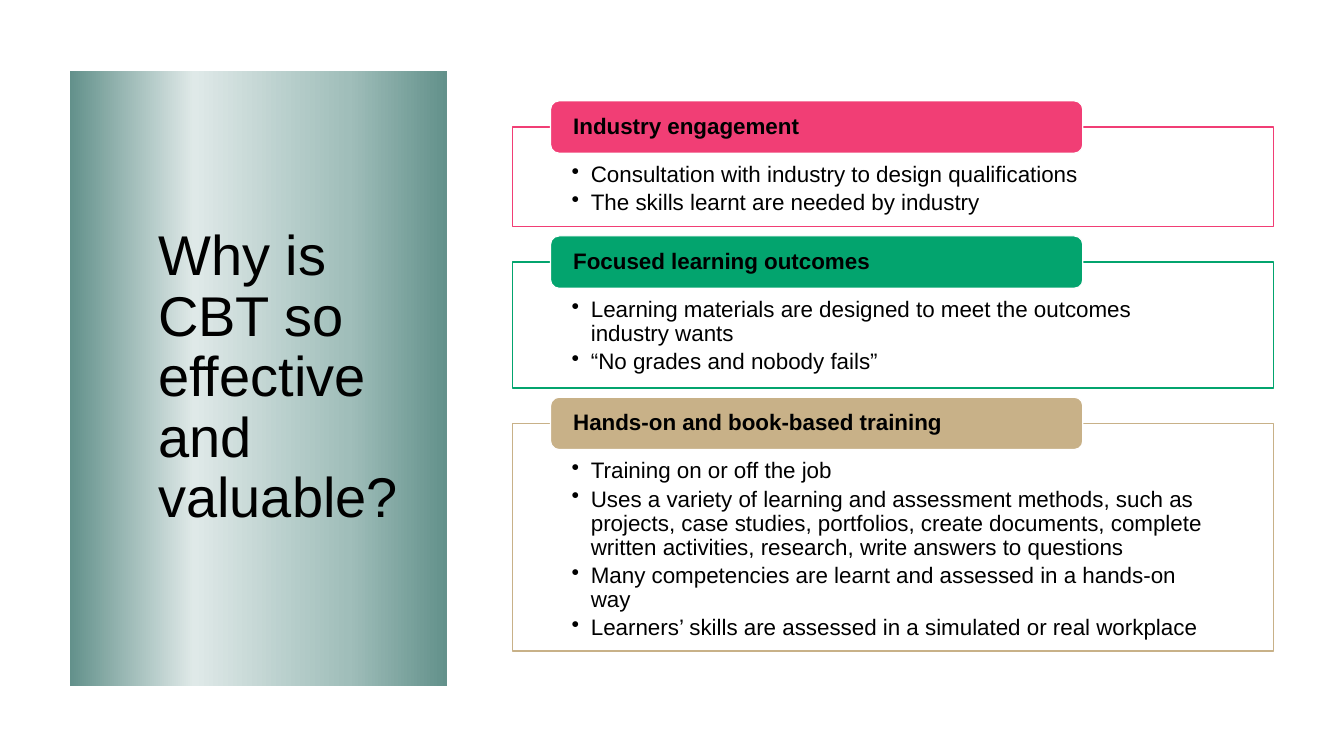
from lxml.etree import SubElement
from pptx import Presentation
from pptx.dml.color import RGBColor
from pptx.enum.shapes import MSO_SHAPE
from pptx.enum.text import MSO_ANCHOR, MSO_AUTO_SIZE, PP_ALIGN
from pptx.oxml.ns import qn
from pptx.util import Inches, Pt


def rgb(value):
    return RGBColor.from_string(value)


def add_panel(shape_type, left, top, width, height, fill, line, insets, anchor, lines):
    panel = slide.shapes.add_shape(
        shape_type, Inches(left), Inches(top), Inches(width), Inches(height))
    panel.shadow.inherit = False
    panel.fill.solid()
    panel.fill.fore_color.rgb = rgb(fill)
    panel.line.color.rgb = rgb(line)
    panel.line.width = Pt(0.85)
    frame = panel.text_frame
    frame.word_wrap = True
    frame.vertical_anchor = anchor
    frame.margin_left, frame.margin_top, frame.margin_right, frame.margin_bottom = map(
        Inches, insets)
    frame.text = "\n".join(lines)
    for paragraph in frame.paragraphs:
        paragraph.alignment = PP_ALIGN.LEFT
        paragraph.line_spacing = 0.9
    return panel


prs = Presentation()
prs.slide_width = Inches(13.33)
prs.slide_height = Inches(7.5)
slide = prs.slides.add_slide(prs.slide_layouts[5])

title = slide.shapes.title
title.left, title.top, title.width, title.height = map(Inches, (0.69, 0.7, 3.74, 6.11))
title.fill.gradient()
title.fill.gradient_angle = 0
stops = title.fill._xPr.find(qn("a:gradFill")).find(qn("a:gsLst"))
for stop in list(stops):
    stops.remove(stop)
for position, color in ((0, "63918B"), (33, "DFE9E8"), (74, "A0BEBA"), (100, "63918B")):
    stop = SubElement(stops, qn("a:gs"), pos=str(position * 1000))
    SubElement(stop, qn("a:srgbClr"), val=color)
title.text_frame.text = "Why is CBT so effective and valuable?"
title.text_frame.word_wrap = True
title.text_frame.auto_size = MSO_AUTO_SIZE.NONE
title.text_frame.vertical_anchor = MSO_ANCHOR.MIDDLE
question = title.text_frame.paragraphs[0]
question.alignment = PP_ALIGN.LEFT
question.line_spacing = 0.9
question._p.get_or_add_pPr().set("marL", str(Inches(0.78)))
question.font.name = "Arial"
question.font.size = Pt(40)
question.font.color.rgb = rgb("000000")

reasons = [
    ("Industry engagement", "F13E75", 0.99, [
        "Consultation with industry to design qualifications",
        "The skills learnt are needed by industry",
    ]),
    ("Focused learning outcomes", "03A46E", 1.25, [
        "Learning materials are designed to meet the outcomes industry wants",
        "“No grades and nobody fails”",
    ]),
    ("Hands-on and book-based training", "C8B188", 2.26, [
        "Training on or off the job",
        "Uses a variety of learning and assessment methods, such as projects, "
        "case studies, portfolios, create documents, complete written activities, "
        "research, write answers to questions",
        "Many competencies are learnt and assessed in a hands-on way",
        "Learners’ skills are assessed in a simulated or real workplace",
    ]),
]

top = 1.26
for heading, accent, height, points in reasons:
    details = add_panel(MSO_SHAPE.RECTANGLE, 5.08, top, 7.55, height, "FFFFFF", accent,
                        (0.59, 0.36, 0.59, 0.12), MSO_ANCHOR.TOP, points)
    white = details.fill._xPr.find(qn("a:solidFill")).find(qn("a:srgbClr"))
    SubElement(white, qn("a:alpha"), val="90000")
    for paragraph in details.text_frame.paragraphs:
        paragraph.level = 1
        paragraph.space_after = Pt(2.8)
        properties = paragraph._p.get_or_add_pPr()
        properties.set("marL", str(Inches(0.19)))
        properties.set("indent", str(-Inches(0.19)))
        SubElement(properties, qn("a:buChar"), char="•")

    tab = add_panel(MSO_SHAPE.ROUNDED_RECTANGLE, 5.46, top - 0.26, 5.28, 0.52, accent, "FFFFFF",
                    (0.2, 0, 0.2, 0), MSO_ANCHOR.MIDDLE, [heading])
    tab.text_frame.paragraphs[0].font.bold = True

    for panel in (details, tab):
        for paragraph in panel.text_frame.paragraphs:
            paragraph.font.name = "Arial"
            paragraph.font.size = Pt(16)
            paragraph.font.color.rgb = rgb("000000")
    top += height + 0.35

prs.save("out.pptx")
